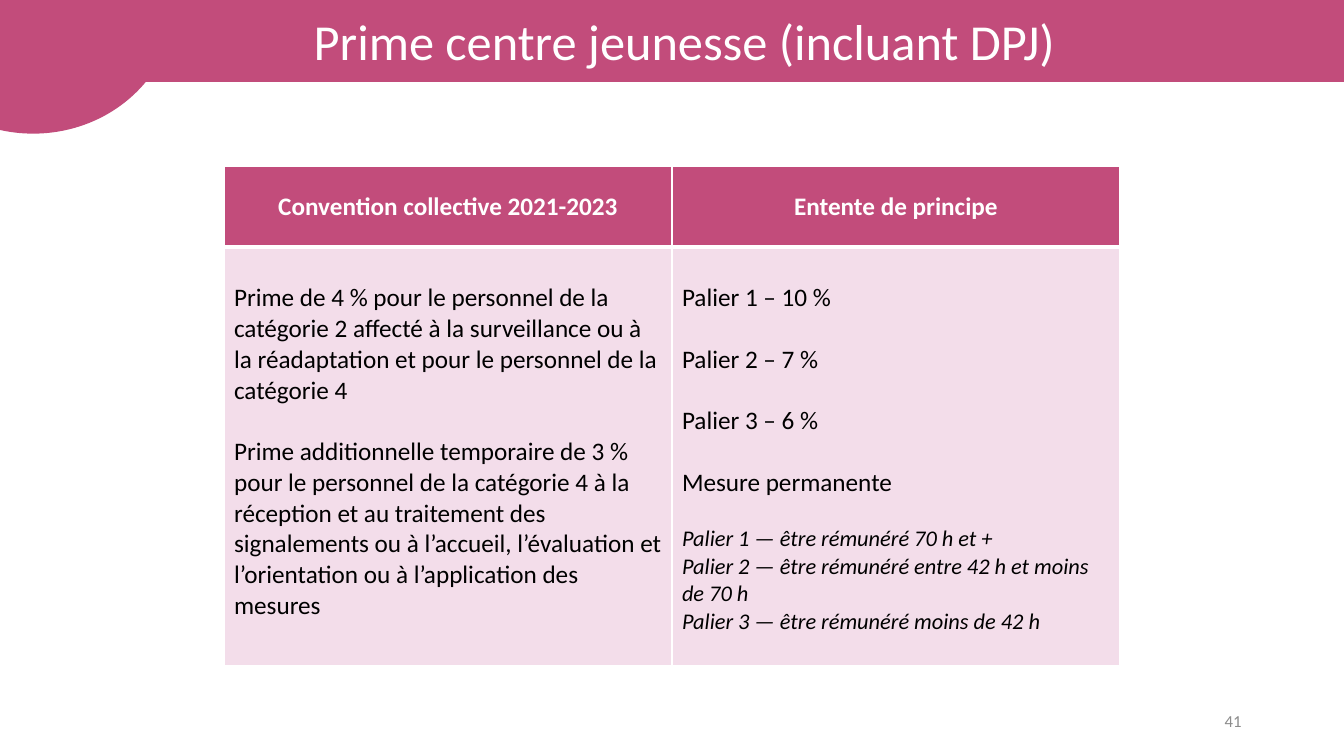
"""Build the slide comparing the youth centre premium before and after the agreement."""
from dataclasses import dataclass

import pptx
import pptx.dml.color
import pptx.enum.shapes
import pptx.enum.text
import pptx.oxml
import pptx.oxml.ns
import pptx.util

Pt = pptx.util.Pt
Align = pptx.enum.text.PP_ALIGN
Anchor = pptx.enum.text.MSO_ANCHOR
Shape = pptx.enum.shapes.MSO_SHAPE


@dataclass(frozen=True)
class Theme:
    font: str = "Calibri"
    rose: str = "C24C7B"
    pale: str = "F3DDEA"
    white: str = "FFFFFF"
    black: str = "000000"
    grey: str = "8C8C8C"
    title: int = 36
    body: int = 18
    detail: int = 16
    number: int = 12


theme = Theme()
rgb = pptx.dml.color.RGBColor.from_string


def write(para, text, size, colour, align=Align.LEFT):
    para.text = text
    para.alignment = align
    para.font.name = theme.font
    para.font.size = Pt(size)
    para.font.color.rgb = rgb(colour)


def style_cell(cell, fill, borders):
    properties = cell._tc.get_or_add_tcPr()
    for side, width in zip("LRTB", borders):
        properties.append(pptx.oxml.parse_xml(
            f'<a:ln{side} {pptx.oxml.ns.nsdecls("a")} w="{Pt(width)}"><a:solidFill>'
            f'<a:srgbClr val="{theme.white}"/></a:solidFill></a:ln{side}>'))
    cell.fill.solid()
    cell.fill.fore_color.rgb = rgb(fill)


deck = pptx.Presentation()
deck.slide_width, deck.slide_height = Pt(960), Pt(540)
page = deck.slides.add_slide(deck.slide_layouts[6])

banner = page.shapes.add_shape(Shape.ROUNDED_RECTANGLE, Pt(0), Pt(0), Pt(978), Pt(58.3))
banner.adjustments[0] = 0
disc = page.shapes.add_shape(Shape.OVAL, Pt(-77.8), Pt(-95.8), Pt(203), Pt(190.8))
for shape in (banner, disc):
    shape.shadow.inherit = False
    shape.fill.solid()
    shape.fill.fore_color.rgb = rgb(theme.rose)
    shape.line.color.rgb = rgb(theme.rose)
    shape.line.width = Pt(1)
banner.text_frame.vertical_anchor = Anchor.MIDDLE
write(banner.text_frame.paragraphs[0], "Prime centre jeunesse (incluant DPJ)",
      theme.title, theme.white, Align.CENTER)

number_box = page.shapes.add_textbox(Pt(678), Pt(500.5), Pt(216), Pt(28.8))
number_box.text_frame.word_wrap = True
number_box.text_frame.vertical_anchor = Anchor.MIDDLE
write(number_box.text_frame.paragraphs[0], "41", theme.number, theme.grey, Align.RIGHT)

columns = [
    ("Convention collective 2021-2023", [
        "Prime de 4 % pour le personnel de la catégorie 2 affecté à la surveillance "
        "ou à la réadaptation et pour le personnel de la catégorie 4",
        "Prime additionnelle temporaire de 3 % pour le personnel de la catégorie 4 "
        "à la réception et au traitement des signalements ou à l’accueil, "
        "l’évaluation et l’orientation ou à l’application des mesures",
    ], []),
    ("Entente de principe", [
        "Palier 1 – 10 %",
        "Palier 2 – 7 %",
        "Palier 3 – 6 %",
        "Mesure permanente",
    ], [
        "Palier 1 — être rémunéré 70 h et +",
        "Palier 2 — être rémunéré entre 42 h et moins de 70 h",
        "Palier 3 — être rémunéré moins de 42 h",
    ]),
]
table = page.shapes.add_table(2, 2, Pt(160), Pt(118.8), Pt(640), Pt(356.4)).table
table.rows[0].height, table.rows[1].height = Pt(57.6), Pt(298.8)

for index, (heading, premiums, details) in enumerate(columns):
    table.columns[index].width = Pt(320)
    head, body = table.cell(0, index), table.cell(1, index)
    style_cell(head, theme.rose, (1, 1, 1, 3))
    style_cell(body, theme.pale, (1, 1, 3, 1))
    head.vertical_anchor = Anchor.MIDDLE
    title = head.text_frame.paragraphs[0]
    write(title, heading, theme.body, theme.white, Align.CENTER)
    title.font.bold = True

    body.margin_top = Pt(25.6)
    for position, text in enumerate(premiums + details):
        para = body.text_frame.paragraphs[0] if position == 0 else body.text_frame.add_paragraph()
        is_detail = position >= len(premiums)
        write(para, text, theme.detail if is_detail else theme.body, theme.black)
        para.font.italic = is_detail
        if 0 < position < len(premiums):
            para.space_before = Pt(22)
        elif position == len(premiums):
            para.space_before = Pt(19.5)

deck.save("out.pptx")
